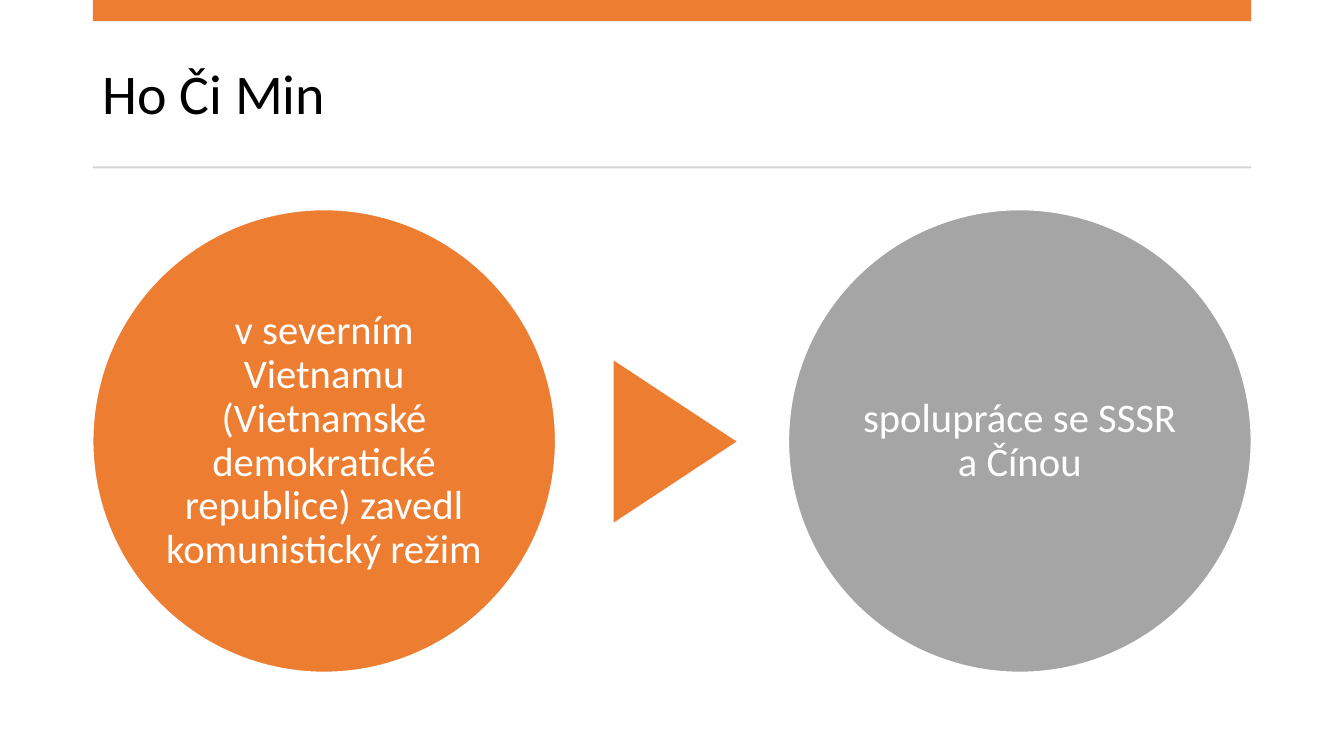
from dataclasses import dataclass

from pptx import Presentation
from pptx.dml.color import RGBColor
from pptx.enum.shapes import MSO_SHAPE as Kind
from pptx.enum.text import MSO_ANCHOR as Anchor, PP_ALIGN as Align
from pptx.shapes.autoshape import Shape
from pptx.slide import Slide
from pptx.text.text import TextFrame
from pptx.util import Inches, Pt

COLORS = {
    "orange": "ED7D31",
    "gray": "A5A5A5",
    "rule": "D5D5D5",
    "white": "FFFFFF",
    "black": "000000",
}
LEFT, WIDTH = 0.92, 11.49
TOP, SIZE = 2.08, 4.59


@dataclass
class Form:
    kind: Kind
    left: float
    top: float
    width: float
    height: float
    fill: str
    turn: float = 0
    line: str = ""
    text: str = ""


FORMS = [
    Form(Kind.RECTANGLE, LEFT, 0, WIDTH, 0.21, "orange"),
    Form(Kind.RECTANGLE, LEFT, 1.65, WIDTH, 0.02, "rule"),
    Form(Kind.OVAL, LEFT, TOP, SIZE, SIZE, "orange", line="white",
         text="v severním Vietnamu (Vietnamské demokratické republice) "
              "zavedl komunistický režim"),
    Form(Kind.ISOSCELES_TRIANGLE, 5.89, 3.77, 1.61, 1.22, "orange", turn=90),
    Form(Kind.OVAL, LEFT + WIDTH - SIZE, TOP, SIZE, SIZE, "gray", line="white",
         text="spolupráce se SSSR a Čínou"),
]


def color(name: str) -> RGBColor:
    return RGBColor.from_string(COLORS[name])


def write(frame: TextFrame, text: str, size: float, ink: str, align: Align) -> None:
    frame.word_wrap = True
    frame.vertical_anchor = Anchor.MIDDLE
    para = frame.paragraphs[0]
    para.alignment = align
    para.line_spacing = 0.9
    run = para.add_run()
    run.text = text
    run.font.name = "Calibri"
    run.font.size = Pt(size)
    run.font.color.rgb = color(ink)


def draw(slide: Slide, form: Form) -> Shape:
    shape = slide.shapes.add_shape(
        form.kind, Inches(form.left), Inches(form.top),
        Inches(form.width), Inches(form.height))
    shape.shadow.inherit = False
    shape.rotation = form.turn
    shape.fill.solid()
    shape.fill.fore_color.rgb = color(form.fill)
    if form.line:
        shape.line.color.rgb = color(form.line)
        shape.line.width = Pt(1)
    else:
        shape.line.fill.background()
    if form.text:
        frame = shape.text_frame
        frame.margin_left = frame.margin_right = Inches(0.04)
        frame.margin_top = frame.margin_bottom = Inches(0.04)
        write(frame, form.text, 29, "white", Align.CENTER)
    return shape


def main() -> None:
    deck = Presentation()
    deck.slide_width, deck.slide_height = Inches(13.33), Inches(7.5)
    slide = deck.slides.add_slide(deck.slide_layouts[6])
    title = slide.shapes.add_textbox(
        Inches(LEFT), Inches(0.37), Inches(WIDTH), Inches(1.18))
    write(title.text_frame, "Ho Či Min", 40, "black", Align.LEFT)
    for form in FORMS:
        draw(slide, form)
    deck.save("out.pptx")


if __name__ == "__main__":
    main()
